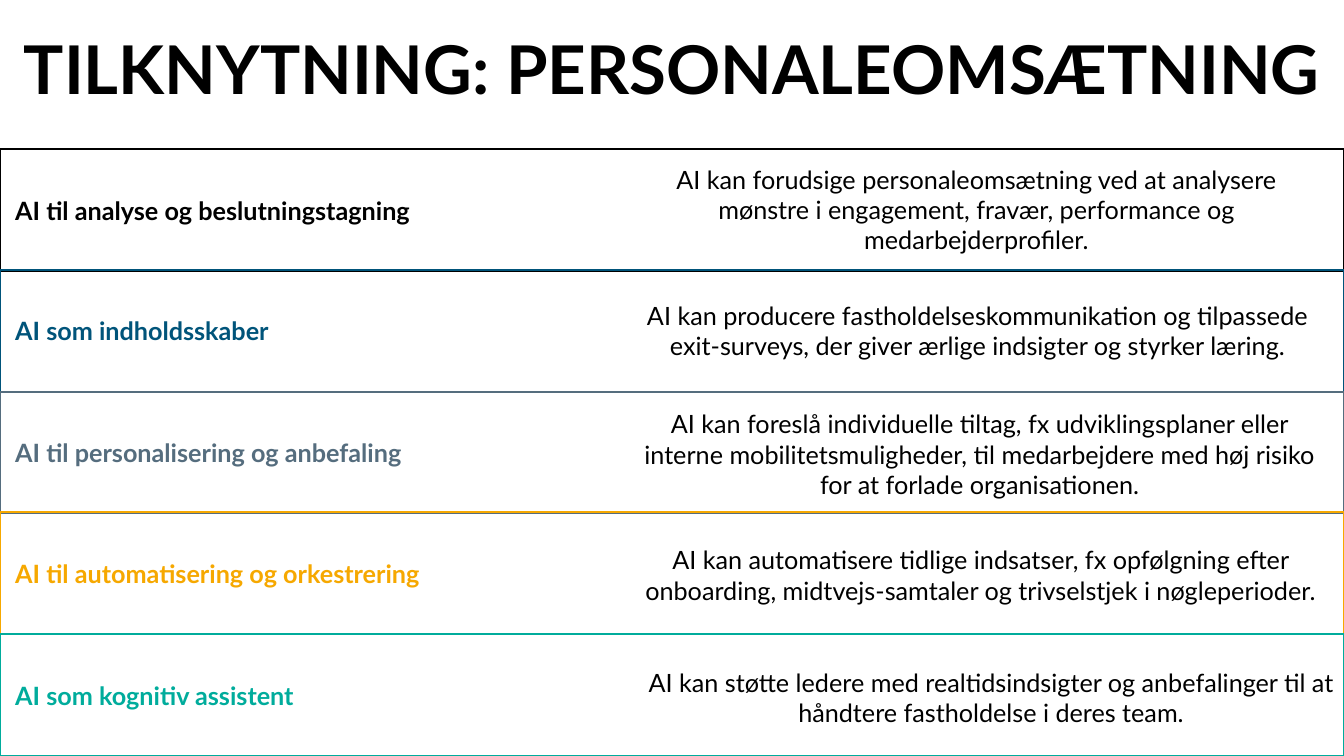
from pptx import Presentation
from pptx.dml.color import RGBColor as Rgb
from pptx.enum.shapes import MSO_SHAPE as Kind
from pptx.enum.text import MSO_ANCHOR as Anchor, PP_ALIGN as Align
from pptx.util import Pt

PX = 9525
WIDE, HIGH = 1280, 720
TOP = 142
FONT = "Lato"
HUES = {
    "black": "000000",
    "blue": "00547A",
    "slate": "556D7E",
    "amber": "F6A800",
    "teal": "00AC9C",
}
# hue, label, text left, text drop below the row top, text
ROWS = [
    ("black", "AI til analyse og beslutningstagning", 594, 0,
     "AI kan forudsige personaleomsætning ved at analysere mønstre i "
     "engagement, fravær, performance og medarbejderprofiler."),
    ("blue", "AI som indholdsskaber", 595, 0,
     "AI kan producere fastholdelseskommunikation og tilpassede "
     "exit-surveys, der giver ærlige indsigter og styrker læring."),
    ("slate", "AI til personalisering og anbefaling", 597, 2,
     "AI kan foreslå individuelle tiltag, fx udviklingsplaner eller interne "
     "mobilitetsmuligheder, til medarbejdere med høj risiko for at forlade "
     "organisationen."),
    ("amber", "AI til automatisering og orkestrering", 598, 2,
     "AI kan automatisere tidlige indsatser, fx opfølgning efter onboarding, "
     "midtvejs-samtaler og trivselstjek i nøgleperioder."),
    ("teal", "AI som kognitiv assistent", 608, 3,
     "AI kan støtte ledere med realtidsindsigter og anbefalinger til at "
     "håndtere fastholdelse i deres team."),
]


def scale(*box):
    return [n * PX for n in box]


def color(hue):
    return Rgb.from_string(HUES[hue])


def write(shape, text, size, hue, bold, align):
    frame = shape.text_frame
    frame.word_wrap = True
    frame.vertical_anchor = Anchor.MIDDLE
    para = frame.paragraphs[0]
    para.alignment = align
    run = para.add_run()
    run.text = text
    font = run.font
    font.name, font.size, font.bold = FONT, Pt(size), bold
    font.color.rgb = color(hue)


def add_text(slide, box, text, size, bold=False):
    shape = slide.shapes.add_textbox(*scale(*box))
    write(shape, text, size, "black", bold, Align.CENTER)


def add_band(slide, box, label, hue):
    """Draw an outlined row with its label at the left."""
    shape = slide.shapes.add_shape(Kind.RECTANGLE, *scale(*box))
    shape.shadow.inherit = False
    shape.fill.background()
    shape.line.color.rgb = color(hue)
    shape.line.width = Pt(1.5)
    write(shape, " " + label, 18, hue, True, Align.LEFT)


def main():
    deck = Presentation()
    deck.slide_width, deck.slide_height = scale(WIDE, HIGH)
    slide = deck.slides.add_slide(deck.slide_layouts[6])
    tops = [TOP + i * (HIGH - TOP) // len(ROWS) for i in range(len(ROWS))]
    for top, (hue, label, _, _, _) in zip(tops, ROWS):
        add_band(slide, (0, top, WIDE, 116), label, hue)
    add_text(slide, (0, 0, WIDE, 129), "TILKNYTNING: PERSONALEOMSÆTNING", 48, True)
    for top, (_, _, left, drop, text) in zip(tops, ROWS):
        add_text(slide, (left, top + drop, 672, 115), text, 18)
    deck.save("out.pptx")


if __name__ == "__main__":
    main()
